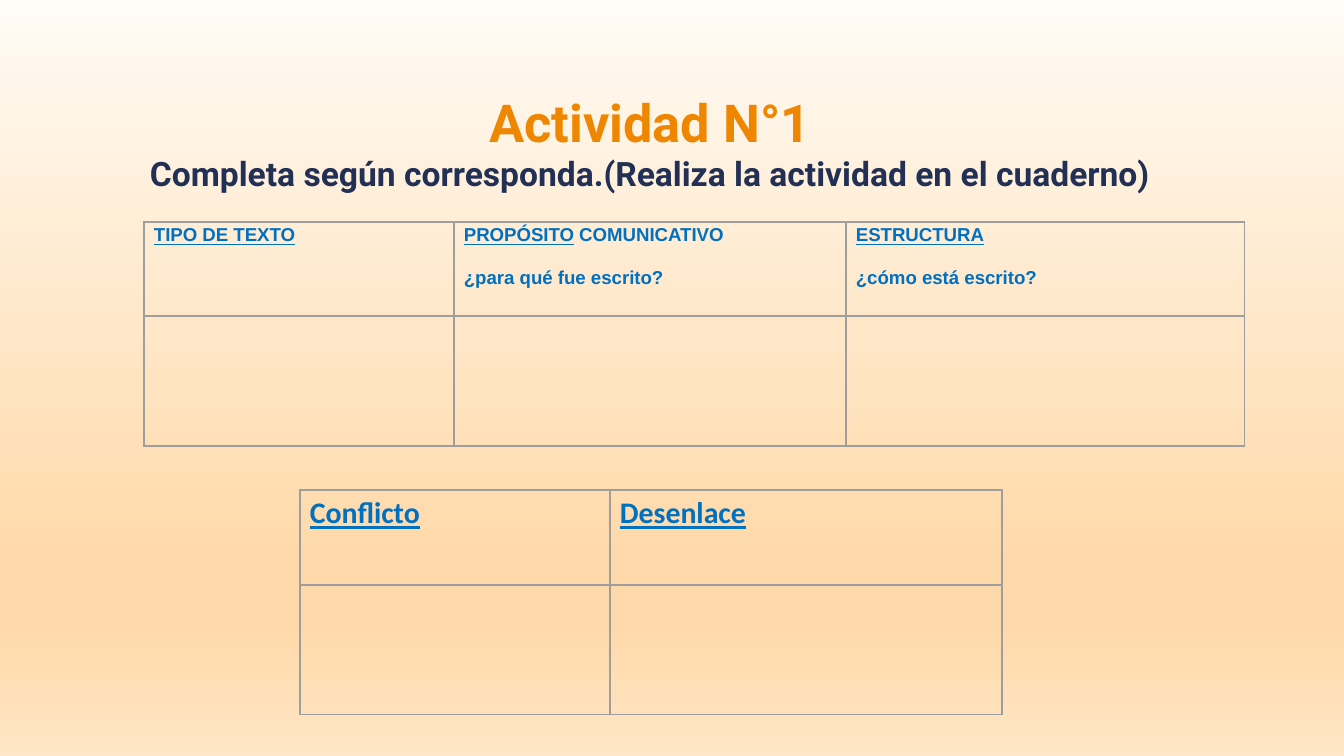
from lxml import etree
from pptx import Presentation
from pptx.dml.color import RGBColor
from pptx.enum.text import MSO_ANCHOR, PP_ALIGN
from pptx.oxml.ns import qn
from pptx.util import Emu, Pt

CENTER = PP_ALIGN.CENTER
MIDDLE = MSO_ANCHOR.MIDDLE
EMU_PER_PX = 914400 / 134.4

ORANGE = RGBColor(0xEF, 0x86, 0x00)
NAVY = RGBColor(0x21, 0x30, 0x54)
BLUE = RGBColor(0x00, 0x70, 0xC0)
GRAY = RGBColor(0x9E, 0x9E, 0x9E)
BACKGROUND_STOPS = [
    (0, RGBColor(0xFF, 0xFB, 0xF5)),
    (74, RGBColor(0xFF, 0xD9, 0xA9)),
    (83, RGBColor(0xFF, 0xD9, 0xA9)),
    (100, RGBColor(0xFF, 0xE6, 0xC6)),
]

TEXT_HEADINGS = [
    [[("TIPO DE TEXTO", True)]],
    [[("PROPÓSITO", True), (" COMUNICATIVO", False)], [("¿para qué fue escrito?", False)]],
    [[("ESTRUCTURA", True)], [("¿cómo está escrito?", False)]],
]
STORY_HEADINGS = [[[("Conflicto", True)]], [[("Desenlace", True)]]]


def px(length):
    """Turn pixels into EMU."""
    return Emu(round(length * EMU_PER_PX))


def style_run(run, font, size, color, underline=False):
    """Give a run its bold lettering."""
    run.font.name = font
    run.font.size = Pt(size)
    run.font.bold = True
    run.font.underline = underline
    run.font.color.rgb = color


def paint_background(slide):
    """Fill the background with a vertical gradient."""
    fill = slide.background.fill
    fill.gradient()
    fill.gradient_angle = 270
    stops = next(slide.element.iter(qn("a:gsLst")))
    for stop in list(stops):
        stops.remove(stop)
    for percent, color in BACKGROUND_STOPS:
        stop = etree.SubElement(stops, qn("a:gs"), pos=str(percent * 1000))
        etree.SubElement(stop, qn("a:srgbClr"), val=str(color))


def add_title(slide):
    """Add the activity title with its instruction."""
    title = slide.shapes.add_textbox(px(83), px(107), px(1134), px(70))
    frame = title.text_frame
    frame.word_wrap = True
    frame.vertical_anchor = MIDDLE
    frame.margin_left = frame.margin_right = frame.margin_top = frame.margin_bottom = px(13)
    paragraph = frame.paragraphs[0]
    paragraph.text = "Actividad N°1\vCompleta según corresponda.(Realiza la actividad en el cuaderno)"
    paragraph.alignment = CENTER
    heading, instruction = paragraph.runs
    style_run(heading, "Roboto", 28, ORANGE)
    style_run(instruction, "Roboto", 18, NAVY)


def border_cell(cell):
    """Draw a thin gray line on every side of a cell."""
    properties = cell._tc.get_or_add_tcPr()
    for position, side in enumerate(("a:lnL", "a:lnR", "a:lnT", "a:lnB")):
        line = etree.Element(qn(side), w=str(Pt(0.75)))
        solid = etree.SubElement(line, qn("a:solidFill"))
        etree.SubElement(solid, qn("a:srgbClr"), val=str(GRAY))
        properties.insert(position, line)


def write_heading(cell, lines, font, size):
    """Write the heading lines of a column."""
    frame = cell.text_frame
    for index, parts in enumerate(lines):
        paragraph = frame.add_paragraph() if index else frame.paragraphs[0]
        paragraph.line_spacing = 1.15
        paragraph.space_after = Pt(10)
        for text, underline in parts:
            run = paragraph.add_run()
            run.text = text
            style_run(run, font, size, BLUE, underline)


def add_answer_table(slide, left, top, widths, heights, headings, font, size):
    """Add a table with a heading row and an empty row for answers."""
    table = slide.shapes.add_table(
        len(heights), len(widths), px(left), px(top), px(sum(widths)), px(sum(heights))
    ).table
    table.first_row = table.horz_banding = False
    for column, width in zip(table.columns, widths):
        column.width = px(width)
    for row, height in zip(table.rows, heights):
        row.height = px(height)
    for cell in table.iter_cells():
        cell.fill.background()
        cell.margin_left = cell.margin_right = px(10)
        cell.margin_top = cell.margin_bottom = 0
        border_cell(cell)
    for cell, lines in zip(table.rows[0].cells, headings):
        write_heading(cell, lines, font, size)


def main():
    """Build the activity slide."""
    presentation = Presentation()
    presentation.slide_width = px(1344)
    presentation.slide_height = px(756)
    slide = presentation.slides.add_slide(presentation.slide_layouts[6])
    paint_background(slide)
    add_answer_table(slide, 144, 222, [310, 392, 399], [94, 130], TEXT_HEADINGS, "Arial", 10)
    add_title(slide)
    add_answer_table(slide, 300, 490, [310, 392], [95, 130], STORY_HEADINGS, "Calibri", 16)
    presentation.save("out.pptx")


if __name__ == "__main__":
    main()
